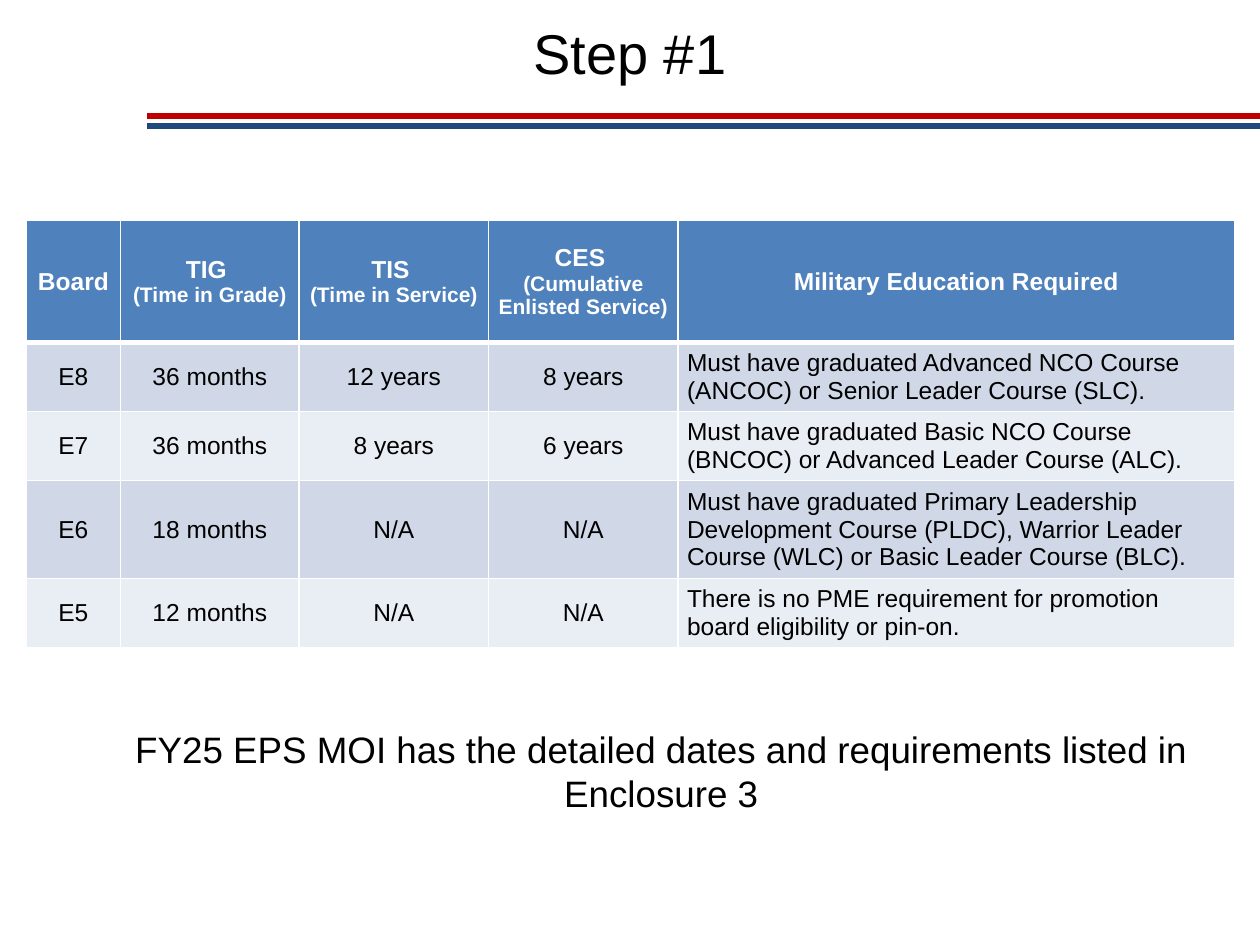
from dataclasses import dataclass

from lxml.etree import SubElement
from pptx import Presentation
from pptx.dml.color import RGBColor
from pptx.enum.shapes import MSO_CONNECTOR
from pptx.enum.text import MSO_ANCHOR, PP_ALIGN
from pptx.oxml.ns import qn
from pptx.util import Cm, Pt


@dataclass(frozen=True)
class Theme:
    font: str = "Arial"
    black: str = "000000"
    white: str = "FFFFFF"
    red: str = "C00000"
    navy: str = "1F497D"
    header: str = "4F81BD"
    bands: tuple = ("D0D8E8", "E9EDF4")
    title_size: int = 32
    note_size: int = 21
    cell_size: int = 14
    detail_size: int = 12


THEME = Theme()

COLUMN_WIDTHS = (1.9, 3.6, 3.82, 3.82, 11.22)
ROW_HEIGHTS = (2.46, 1.37, 1.37, 1.96, 1.37)

# Each heading is a main line and an optional smaller second line
HEADINGS = (
    ("Board", ""),
    ("TIG ", "(Time in Grade)"),
    ("TIS ", "(Time in Service)"),
    ("CES ", "(Cumulative Enlisted Service)"),
    ("Military Education Required", ""),
)
REQUIREMENTS = (
    ("E8", "36 months", "12 years", "8 years",
     "Must have graduated Advanced NCO Course (ANCOC) or Senior Leader Course (SLC)."),
    ("E7", "36 months", "8 years", "6 years",
     "Must have graduated Basic NCO Course (BNCOC) or Advanced Leader Course (ALC)."),
    ("E6", "18 months", "N/A", "N/A",
     "Must have graduated Primary Leadership Development Course (PLDC), "
     "Warrior Leader Course (WLC) or Basic Leader Course (BLC)."),
    ("E5", "12 months", "N/A", "N/A",
     "There is no PME requirement for promotion board eligibility or pin-on."),
)


def set_values(target, values):
    for name, value in values.items():
        setattr(target, name, value)


def add_span(para, text, size, color=THEME.black, bold=False):
    span = para.add_run()
    span.text = text
    set_values(span.font, {"name": THEME.font, "size": Pt(size), "bold": bold})
    span.font.color.rgb = RGBColor.from_string(color)


def add_rule(page, top, color):
    rule = page.shapes.add_connector(
        MSO_CONNECTOR.STRAIGHT, Cm(2.97), Cm(top), Cm(25.4), Cm(top))
    rule.line.color.rgb = RGBColor.from_string(color)
    rule.line.width = Pt(3)
    SubElement(rule._element.spPr, qn("a:effectLst"))


def add_text(page, place, text, size, margins):
    box = page.shapes.add_textbox(*(Cm(length) for length in place))
    set_values(box.text_frame, {"word_wrap": True, **margins})
    para = box.text_frame.paragraphs[0]
    para.alignment = PP_ALIGN.CENTER
    add_span(para, text, size)
    return para


def set_borders(cell, bottom_width):
    properties = cell._tc.get_or_add_tcPr()
    for side, width in (("L", 1), ("R", 1), ("T", 1), ("B", bottom_width)):
        line = SubElement(properties, qn(f"a:ln{side}"), w=str(Pt(width)))
        fill = SubElement(line, qn("a:solidFill"))
        SubElement(fill, qn("a:srgbClr"), val=THEME.white)


def format_cell(cell, color, centred=True, bottom_width=1):
    set_borders(cell, bottom_width)
    set_values(cell, {
        "vertical_anchor": MSO_ANCHOR.MIDDLE,
        "margin_left": Cm(0.18), "margin_right": Cm(0.18),
        "margin_top": Cm(0.1), "margin_bottom": Cm(0.1),
    })
    cell.fill.solid()
    cell.fill.fore_color.rgb = RGBColor.from_string(color)
    para = cell.text_frame.paragraphs[0]
    para.alignment = PP_ALIGN.CENTER if centred else PP_ALIGN.LEFT
    return para


def add_requirements_table(page):
    table = page.shapes.add_table(
        len(ROW_HEIGHTS), len(COLUMN_WIDTHS), Cm(0.53), Cm(4.45),
        Cm(sum(COLUMN_WIDTHS)), Cm(sum(ROW_HEIGHTS))).table
    for column, width in zip(table.columns, COLUMN_WIDTHS):
        column.width = Cm(width)
    for row, height in zip(table.rows, ROW_HEIGHTS):
        row.height = Cm(height)

    # Header row
    for index, (heading, detail) in enumerate(HEADINGS):
        para = format_cell(table.cell(0, index), THEME.header, bottom_width=3)
        add_span(para, heading, THEME.cell_size, THEME.white, bold=True)
        if detail:
            para.add_line_break()
            add_span(para, detail, THEME.detail_size, THEME.white, bold=True)

    # Banded rows, with the last column left aligned
    for number, values in enumerate(REQUIREMENTS):
        for index, value in enumerate(values):
            para = format_cell(table.cell(number + 1, index), THEME.bands[number % 2],
                               centred=index < len(values) - 1,
                               bottom_width=1)
            add_span(para, value, THEME.cell_size)


def main():
    deck = Presentation()
    set_values(deck, {"slide_width": Cm(25.4), "slide_height": Cm(19.05)})
    page = deck.slides.add_slide(deck.slide_layouts[6])

    # Double rule under the title
    add_rule(page, 2.34, THEME.red)
    add_rule(page, 2.54, THEME.navy)

    # Closing note
    sides = ("left", "right", "top", "bottom")
    note = add_text(page, (0.53, 14.55, 24.33, 2.08),
                    "FY25 EPS MOI has the detailed dates and requirements listed in Enclosure 3",
                    THEME.note_size, {f"margin_{side}": Cm(0.1) for side in sides})
    note.level = 1
    note._p.get_or_add_pPr().set("marL", str(Cm(1.27)))

    # Title
    add_text(page, (0, 0.25, 25.4, 1.63), "Step #1", THEME.title_size, {})

    add_requirements_table(page)
    deck.save("out.pptx")


if __name__ == "__main__":
    main()
